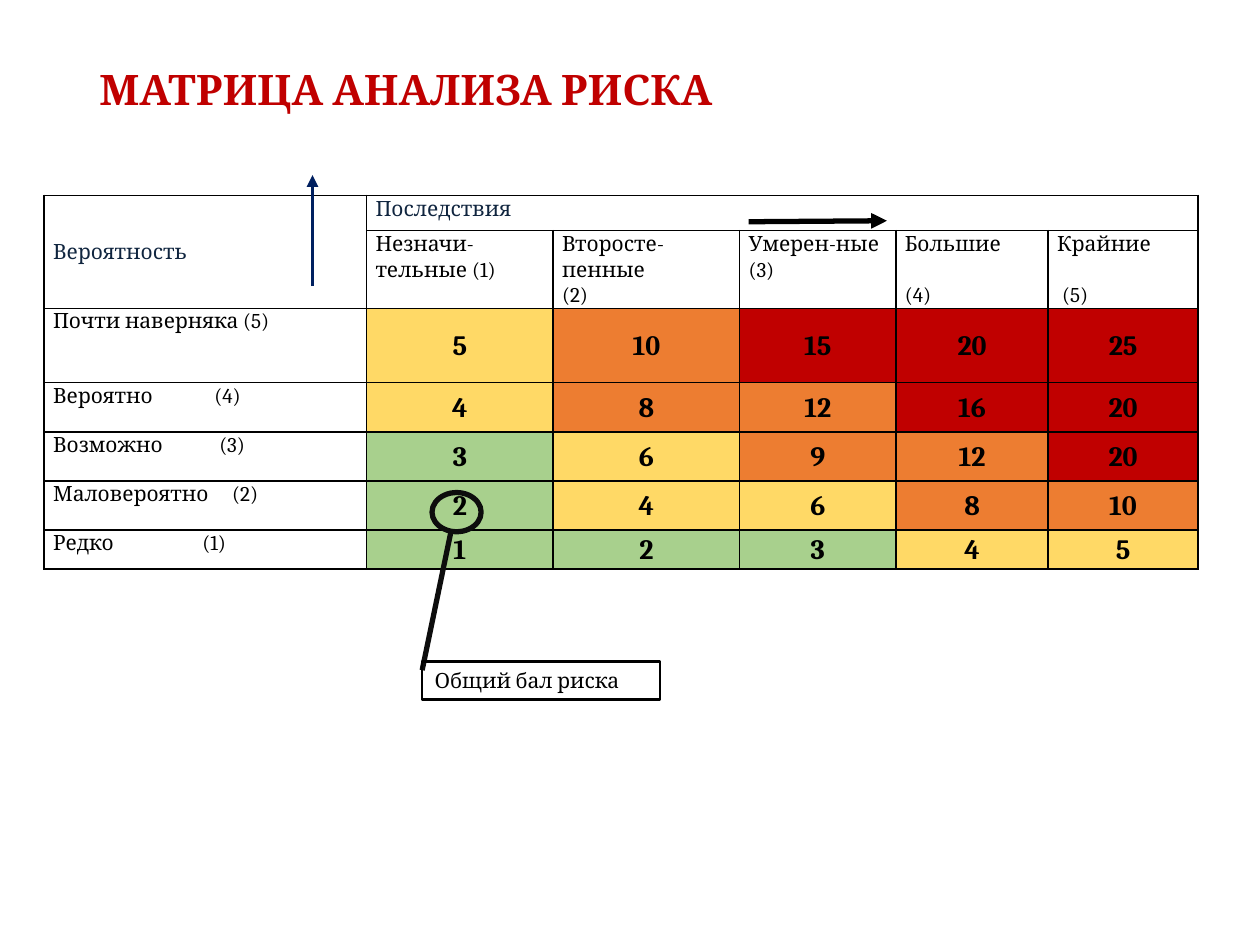
from dataclasses import dataclass

from lxml import etree
from pptx import Presentation
from pptx.dml.color import RGBColor
from pptx.enum import shapes, text
from pptx.oxml import ns
from pptx.util import Cm, Pt


@dataclass(frozen=True)
class Theme:
    """Colours, font and type sizes of the slide."""
    font: str = "Cambria"
    title: str = "C00000"
    axis: str = "10253F"
    ink: str = "000000"
    marker: str = "0D0D0D"
    rise: str = "002060"
    bands: tuple = ((3, "A8D08D"), (6, "FFD966"), (12, "ED7D31"), (25, "C00000"))
    title_size: int = 24
    label_size: int = 12
    score_size: int = 16


@dataclass(frozen=True)
class Box:
    """A region in centimetres."""
    left: float
    top: float
    width: float
    height: float

    def point(self, x, y):
        """Return a slide position for an offset within the box."""
        return Cm(self.left + x), Cm(self.top + y)


THEME = Theme()
COLUMNS = (6.5, 3.76, 3.76, 3.15, 3.07, 3.02)
ROWS = (0.71, 1.5, 1.5, 0.99, 0.99, 0.99, 0.79)
IMPACTS = (
    (("Незначи-тельные (1)", {}),),
    (("Второсте-пенные", {}), ("(2)", {})),
    (("Умерен-ные", {}), ("(3)", {})),
    (("Большие", {}), ("(4)", {"space_before": Pt(14.6)})),
    (("Крайние", {}), ("(5)", {"space_before": Pt(14.6), "indent": 0.1})),
)
LIKELIHOODS = (
    ("Почти наверняка (5)", None, (5, 10, 15, 20, 25)),
    ("Вероятно\t(4)", 3.25, (4, 8, 12, 16, 20)),
    ("Возможно\t(3)", 3.35, (3, 6, 9, 12, 20)),
    ("Маловероятно\t(2)", 3.61, (2, 4, 6, 8, 10)),
    ("Редко\t(1)", 3.01, (1, 2, 3, 4, 5)),
)


def apply(target, values):
    """Set each named attribute on the target."""
    for name, value in values.items():
        setattr(target, name, value)


def write(paragraph, wording, size, color, bold=False, indent=None, tab=None, **layout):
    """Write one formatted run with its paragraph layout."""
    properties = paragraph._p.get_or_add_pPr()
    if indent:
        properties.set("marL", str(Cm(indent)))
    if tab:
        tabs = etree.SubElement(properties, ns.qn("a:tabLst"))
        etree.SubElement(tabs, ns.qn("a:tab"), pos=str(Cm(tab)), algn="l")
    apply(paragraph, layout)
    run = paragraph.add_run()
    run.text = wording
    apply(run.font, {"name": THEME.font, "size": Pt(size), "bold": bold})
    run.font.color.rgb = RGBColor.from_string(color)


def set_line(shape, color, width):
    """Give a shape or connector a solid line."""
    shape.line.color.rgb = RGBColor.from_string(color)
    shape.line.width = Pt(width)


def add_line(slide, start, end, color, width, arrow=False):
    """Draw a straight line, with an arrowhead at its end if asked."""
    line = slide.shapes.add_connector(shapes.MSO_CONNECTOR.STRAIGHT, *start, *end)
    set_line(line, color, width)
    if arrow:
        etree.SubElement(line.line._get_or_add_ln(), ns.qn("a:tailEnd"), type="triangle")
    etree.SubElement(line._element.spPr, ns.qn("a:effectLst"))


def add_outline(slide, kind, position, width, height, color, weight):
    """Draw an unfilled preset shape."""
    shape = slide.shapes.add_shape(kind, *position, Cm(width), Cm(height))
    shape.shadow.inherit = False
    shape.fill.background()
    set_line(shape, color, weight)
    return shape


def frame_cell(cell, fill=None, middle=False):
    """Set the borders, margins, anchor and fill of a cell."""
    properties = cell._tc.get_or_add_tcPr()
    for side in ("lnL", "lnR", "lnT", "lnB"):
        border = etree.SubElement(properties, ns.qn(f"a:{side}"), w=str(Pt(1)))
        solid = etree.SubElement(border, ns.qn("a:solidFill"))
        etree.SubElement(solid, ns.qn("a:srgbClr"), val=THEME.ink)
    anchor = text.MSO_ANCHOR.MIDDLE if middle else text.MSO_ANCHOR.TOP
    apply(cell, {"margin_left": Cm(0.18), "margin_right": Cm(0.18),
                 "margin_top": 0, "margin_bottom": 0, "vertical_anchor": anchor})
    if fill:
        cell.fill.solid()
        cell.fill.fore_color.rgb = RGBColor.from_string(fill)
    else:
        cell.fill.background()


def write_label(cell, lines, color=THEME.ink):
    """Write justified label lines into a cell."""
    for index, (wording, layout) in enumerate(lines):
        frame = cell.text_frame
        paragraph = frame.add_paragraph() if index else frame.paragraphs[0]
        write(paragraph, wording, THEME.label_size, color,
              alignment=text.PP_ALIGN.JUSTIFY, line_spacing=1.07, **layout)


def add_title(slide, box):
    """Place the slide title."""
    title = slide.shapes.title
    apply(title, {"left": Cm(box.left), "top": Cm(box.top),
                  "width": Cm(box.width), "height": Cm(box.height)})
    title.text_frame.vertical_anchor = text.MSO_ANCHOR.MIDDLE
    write(title.text_frame.paragraphs[0], "МАТРИЦА АНАЛИЗА РИСКА", THEME.title_size,
          THEME.title, bold=True, alignment=text.PP_ALIGN.LEFT, line_spacing=0.9)


def add_matrix(slide, box):
    """Place the risk matrix and its axis arrows."""
    table = slide.shapes.add_table(len(ROWS), len(COLUMNS), *box.point(0, 0),
                                   Cm(box.width), Cm(box.height)).table
    apply(table, {"first_row": False, "horz_banding": False})
    for column, width in zip(table.columns, COLUMNS):
        column.width = Cm(width)
    for row, height in zip(table.rows, ROWS):
        row.height = Cm(height)
    for row in range(2):
        for column in range(len(COLUMNS)):
            frame_cell(table.cell(row, column), middle=column == 0)
    table.cell(0, 0).merge(table.cell(1, 0))
    table.cell(0, 1).merge(table.cell(0, 5))
    write_label(table.cell(0, 0), [("Вероятность", {})], THEME.axis)
    write_label(table.cell(0, 1), [("Последствия", {})], THEME.axis)
    for column, lines in enumerate(IMPACTS, 1):
        write_label(table.cell(1, column), lines)
    for row, (label, tab, scores) in enumerate(LIKELIHOODS, 2):
        frame_cell(table.cell(row, 0))
        write_label(table.cell(row, 0), [(label, {"tab": tab})])
        for column, score in enumerate(scores, 1):
            cell = table.cell(row, column)
            fill = next(color for limit, color in THEME.bands if score <= limit)
            frame_cell(cell, fill, middle=True)
            write(cell.text_frame.paragraphs[0], str(score), THEME.score_size, THEME.ink,
                  bold=True, alignment=text.PP_ALIGN.CENTER, line_spacing=1.07)
    add_line(slide, box.point(14.2, 0.53), box.point(16.99, 0.51), THEME.ink, 3, True)
    add_line(slide, box.point(5.41, 1.83), box.point(5.41, -0.41), THEME.rise, 2.25, True)


def add_callout(slide, box):
    """Place the score marker, its leader line and its label."""
    add_outline(slide, shapes.MSO_SHAPE.OVAL, box.point(0.2, 0), 0.99, 0.79, THEME.marker, 3)
    add_line(slide, box.point(0.58, 0.79), box.point(0, 3.58), THEME.marker, 3)
    label = add_outline(slide, shapes.MSO_SHAPE.RECTANGLE, box.point(0, box.height - 0.77),
                        box.width, 0.77, THEME.ink, 1.5)
    apply(label.text_frame, {"word_wrap": True, "vertical_anchor": text.MSO_ANCHOR.TOP,
                             "auto_size": text.MSO_AUTO_SIZE.SHAPE_TO_FIT_TEXT})
    write(label.text_frame.paragraphs[0], "Общий бал риска", THEME.label_size, THEME.ink,
          alignment=text.PP_ALIGN.LEFT)


def main():
    """Build and save the presentation."""
    presentation = Presentation()
    apply(presentation, {"slide_width": Cm(25.4), "slide_height": Cm(19.05)})
    slide = presentation.slides.add_slide(presentation.slide_layouts[5])
    add_title(slide, Box(1.75, 0, 21.9, 3.7))
    add_matrix(slide, Box(0.89, 3.94, sum(COLUMNS), sum(ROWS)))
    add_callout(slide, Box(8.51, 9.93, 4.8, 4.17))
    presentation.save("out.pptx")


if __name__ == "__main__":
    main()
